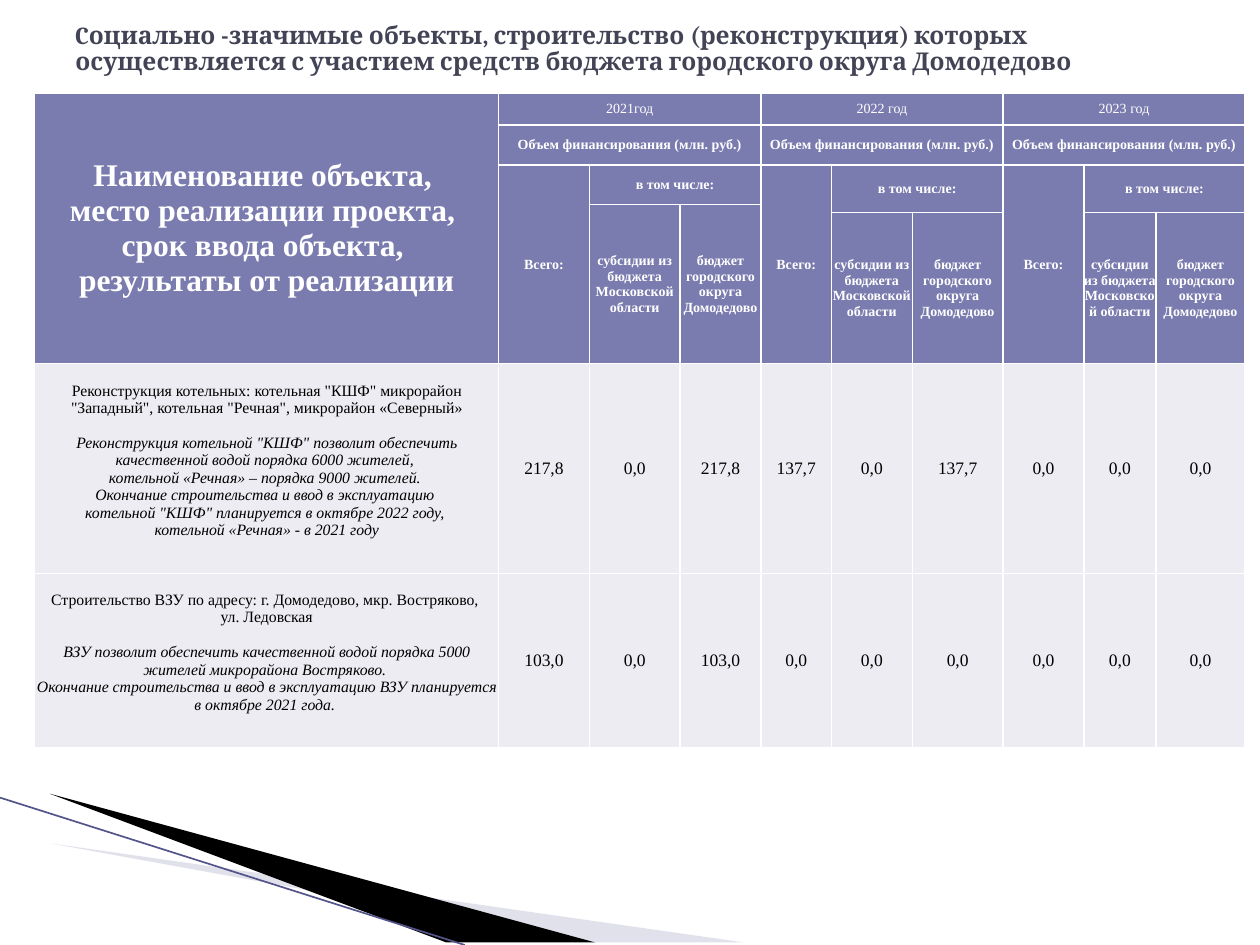
from dataclasses import dataclass
from typing import Any

from lxml import etree
from pptx import Presentation
from pptx.dml.color import RGBColor
from pptx.enum.shapes import MSO_CONNECTOR
from pptx.enum.text import MSO_ANCHOR, PP_ALIGN
from pptx.oxml.ns import qn
from pptx.util import Cm, Pt

STRAIGHT = MSO_CONNECTOR.STRAIGHT
MIDDLE = MSO_ANCHOR.MIDDLE
CENTER = PP_ALIGN.CENTER

COLORS = {
    "title": "424456",
    "header": "7A7BAE",
    "body": "ECECF2",
    "white": "FFFFFF",
    "black": "000000",
    "pale": "B6B6D1",
    "edge": "53548A",
}

TITLE = (
    "Cоциально -значимые объекты, строительство (реконструкция) которых "
    "осуществляется с участием средств бюджета городского округа Домодедово"
)
COLUMNS = [9.35, 1.83, 1.83, 1.63, 1.42, 1.63, 1.83, 1.63, 1.45, 1.8]
ROWS = [0.65, 0.81, 0.79, 0.16, 2.8, 4.23, 3.51]
HEADING = [
    "Наименование объекта, ",
    "место реализации проекта, ",
    "срок ввода объекта, ",
    "результаты от реализации",
]
YEARS = [("2021год", 1), ("2022 год", 2), ("2023 год", 2)]
PROJECTS = [
    (
        ['Реконструкция котельных: котельная "КШФ" микрорайон "Западный", '
         'котельная "Речная", микрорайон «Северный»'],
        ['Реконструкция котельной "КШФ" позволит обеспечить качественной водой '
         "порядка 6000 жителей, ",
         "котельной «Речная» – порядка 9000 жителей. ",
         "Окончание строительства и ввод в эксплуатацию ",
         'котельной "КШФ" планируется в октябре 2022 году, ',
         "котельной «Речная» - в 2021 году"],
        ["217,8", "0,0", "217,8", "137,7", "0,0", "137,7", "0,0", "0,0", "0,0"],
    ),
    (
        ["Строительство ВЗУ по адресу: г. Домодедово, мкр. Востряково, ",
         "ул. Ледовская"],
        ["ВЗУ позволит обеспечить качественной водой порядка 5000 жителей "
         "микрорайона Востряково. ",
         "Окончание строительства и ввод в эксплуатацию ВЗУ планируется "
         "в октябре 2021 года. "],
        ["103,0", "0,0", "103,0"] + ["0,0"] * 6,
    ),
]


@dataclass
class SlideWriter:
    slide: Any
    title_font: str = "Cambria"
    table_font: str = "Times New Roman"

    def color(self, name):
        return RGBColor.from_string(COLORS[name])

    def add_run(self, para, text, font, size, color, bold=False, italic=False):
        span = para.add_run()
        span.text = text
        span.font.name = font
        span.font.size = Pt(size)
        span.font.bold = bold
        span.font.italic = italic
        span.font.color.rgb = self.color(color)

    def wedge(self, points, color, opacity=None):
        builder = self.slide.shapes.build_freeform(*points[0], scale=Cm(1))
        builder.add_line_segments(points[1:], close=True)
        shape = builder.convert_to_shape()
        shape.shadow.inherit = False
        shape.line.fill.background()
        shape.fill.solid()
        shape.fill.fore_color.rgb = self.color(color)
        if opacity is not None:
            fill_color = shape._element.spPr.find(qn("a:solidFill"))[0]
            etree.SubElement(fill_color, qn("a:alpha"), val=str(opacity * 1000))

    def line(self, start, end, color, width):
        ends = [Cm(value) for value in (*start, *end)]
        connector = self.slide.shapes.add_connector(STRAIGHT, *ends)
        connector.line.color.rgb = self.color(color)
        connector.line.width = Pt(width)
        etree.SubElement(connector._element.spPr, qn("a:effectLst"))

    def title(self, text, left, top, width, height):
        box = self.slide.shapes.add_textbox(Cm(left), Cm(top), Cm(width), Cm(height))
        frame = box.text_frame
        frame.word_wrap = True
        frame.vertical_anchor = MIDDLE
        para = frame.paragraphs[0]
        para.line_spacing = 0.9
        self.add_run(para, text, self.title_font, 14, "title", bold=True)

    def table(self, left, top, columns, rows, header_rows):
        frame = self.slide.shapes.add_table(
            len(rows), len(columns), Cm(left), Cm(top), Cm(sum(columns)), Cm(sum(rows))
        )
        table = frame.table
        table.first_row = False
        table.horz_banding = False
        for column, width in zip(table.columns, columns):
            column.width = Cm(width)
        for index, (row, height) in enumerate(zip(table.rows, rows)):
            row.height = Cm(height)
            for cell in row.cells:
                self.style_cell(cell, "header" if index < header_rows else "body")
        return table

    def style_cell(self, cell, color):
        properties = cell._tc.get_or_add_tcPr()
        for side in ("lnL", "lnR", "lnT", "lnB"):
            border = etree.SubElement(properties, qn(f"a:{side}"), w=str(Pt(1)))
            fill = etree.SubElement(border, qn("a:solidFill"))
            etree.SubElement(fill, qn("a:srgbClr"), val=COLORS["white"])
        cell.fill.solid()
        cell.fill.fore_color.rgb = self.color(color)
        cell.vertical_anchor = MIDDLE
        cell.margin_left = cell.margin_right = 0
        cell.margin_top = cell.margin_bottom = 0

    def cell_text(self, cell, lines, size, color, bold=False, details=()):
        frame = cell.text_frame
        for index, text in enumerate([*lines, *details]):
            para = frame.add_paragraph() if index else frame.paragraphs[0]
            para.alignment = CENTER
            if details and index == len(lines):
                para.space_before = Pt(10)
            self.add_run(para, text, self.table_font, size, color, bold,
                         italic=index >= len(lines))

    def header(self, table, row, column, height, width, lines, size=8, bold=True):
        cell = table.cell(row, column)
        if height * width > 1:
            cell.merge(table.cell(row + height - 1, column + width - 1))
        self.cell_text(cell, lines, size, "white", bold)


def main():
    deck = Presentation()
    deck.slide_width, deck.slide_height = Cm(25.4), Cm(19.05)
    page = SlideWriter(deck.slides.add_slide(deck.slide_layouts[6]))

    page.wedge([(1.4, 16.51), (14.99, 19.05), (11.5, 19.05)], "pale", 40)
    page.wedge([(1.35, 16.49), (11.55, 19.05), (9.4, 19.05)], "black")
    page.line((0, 16.08), (9.37, 19.05), "edge", 0.95)
    page.title(TITLE, 1.27, 0.13, 22.86, 1.75)

    table = page.table(0.7, 1.87, COLUMNS, ROWS, header_rows=5)
    page.header(table, 0, 0, 5, 1, HEADING, size=18)
    for group, (year, depth) in enumerate(YEARS):
        first = 1 + 3 * group
        page.header(table, 0, first, 1, 3, [year], bold=False)
        page.header(table, 1, first, 1, 3, ["Объем финансирования (млн. руб.)"])
        page.header(table, 2, first, 3, 1, ["Всего:"])
        page.header(table, 2, first + 1, depth, 2, ["в том числе:"])
        sources = ["субсидии из бюджета Московской области",
                   "бюджет городского округа Домодедово"]
        for column, source in enumerate(sources, first + 1):
            page.header(table, 2 + depth, column, 3 - depth, 1, [source])

    for row, (names, details, amounts) in enumerate(PROJECTS, 5):
        description = table.cell(row, 0)
        description.margin_bottom = Cm(0.32)
        page.cell_text(description, names, 9, "black", details=details)
        for column, amount in enumerate(amounts, 1):
            page.cell_text(table.cell(row, column), [amount], 10, "black")

    deck.save("out.pptx")


if __name__ == "__main__":
    main()
